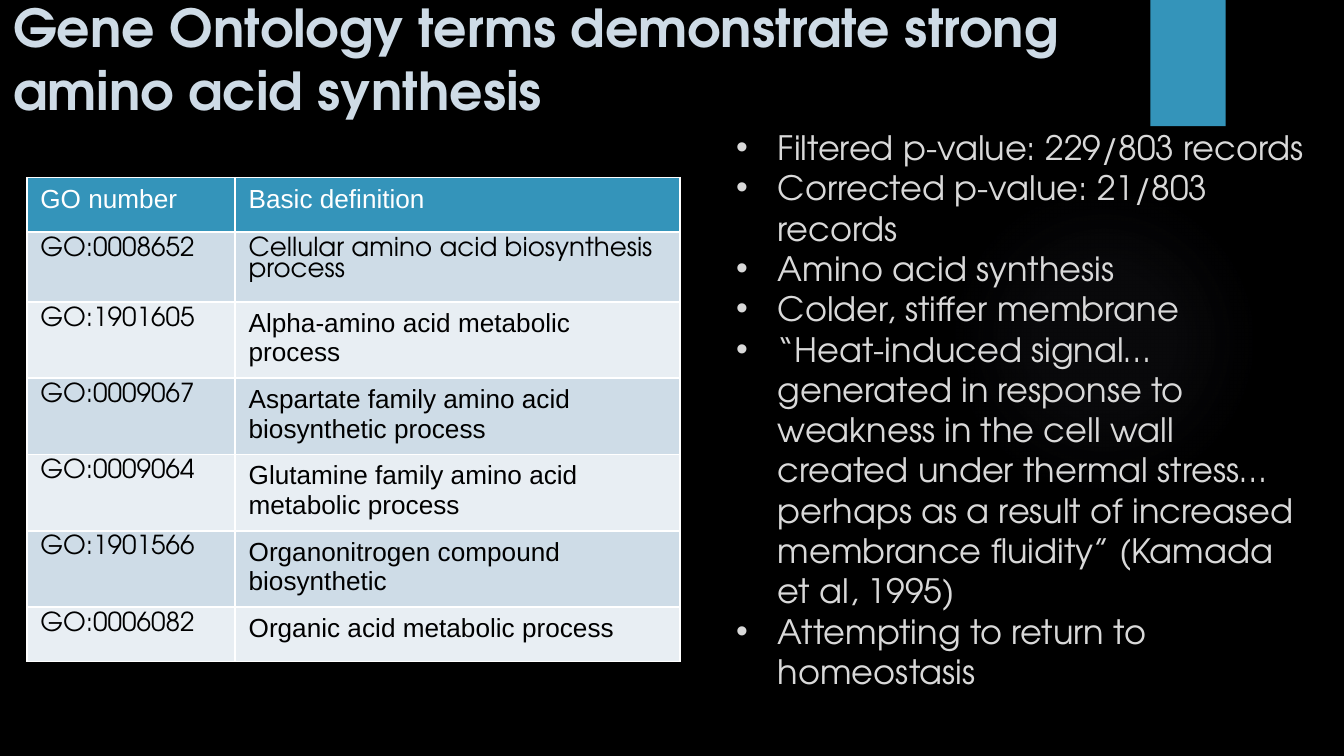
from dataclasses import dataclass

from lxml.etree import SubElement
from pptx import Presentation
from pptx.dml.color import RGBColor
from pptx.enum.shapes import MSO_SHAPE
from pptx.enum.text import MSO_ANCHOR
from pptx.oxml import parse_xml
from pptx.oxml.ns import nsdecls, qn
from pptx.util import Inches, Pt


@dataclass(frozen=True)
class Theme:
    background: str = "000000"
    accent: str = "3494BA"
    glow: str = "7F7B9A"
    title: str = "CEDBE6"
    body: str = "D9D9D9"
    header_text: str = "FFFFFF"
    cell_text: str = "000000"
    border: str = "FFFFFF"
    bands: tuple = ("CEDCE7", "E8EEF3")
    display_font: str = "TeX Gyre Adventor"
    plain_font: str = "Arial"
    title_size: int = 28
    body_size: int = 18
    cell_size: int = 14


THEME = Theme()
WIDTH = Inches(10)
HEIGHT = WIDTH * 9 // 16

TITLE = "Gene Ontology terms demonstrate strong amino acid synthesis"
HEADER = ("GO number", "Basic definition")
TERMS = [
    ("GO:0008652", "Cellular amino acid biosynthesis process"),
    ("GO:1901605", "Alpha-amino acid metabolic process"),
    ("GO:0009067", "Aspartate family amino acid biosynthetic process"),
    ("GO:0009064", "Glutamine family amino acid metabolic process"),
    ("GO:1901566", "Organonitrogen compound biosynthetic"),
    ("GO:0006082", "Organic acid metabolic process"),
]
FINDINGS = [
    "Filtered p-value: 229/803 records",
    "Corrected p-value: 21/803 records",
    "Amino acid synthesis",
    "Colder, stiffer membrane",
    "“Heat-induced signal… generated in response to weakness in the cell wall "
    "created under thermal stress… perhaps as a result of increased "
    "membrance fluidity” (Kamada et al, 1995)",
    "Attempting to return to homeostasis",
]


def share_box(left, top, width, height):
    """Turn percentages of the slide's size into a box of lengths."""
    return (int(WIDTH * left / 100), int(HEIGHT * top / 100),
            int(WIDTH * width / 100), int(HEIGHT * height / 100))


def style_font(font, name, size, color, bold=False):
    font.name, font.size, font.bold = name, Pt(size), bold
    font.color.rgb = RGBColor.from_string(color)


def add_plain_shape(slide, kind, box):
    shape = slide.shapes.add_shape(kind, *box)
    shape.shadow.inherit = False
    shape.line.fill.background()
    return shape


def add_glow(slide, box):
    """Add a faint circle that fades out from its centre."""
    shape = add_plain_shape(slide, MSO_SHAPE.OVAL, box)
    stops = "".join(
        f'<a:gs pos="{position * 1000}"><a:srgbClr val="{THEME.glow}">'
        f'<a:alpha val="{alpha * 1000}"/></a:srgbClr></a:gs>'
        for position, alpha in ((0, 7), (36, 6), (69, 0)))
    gradient = parse_xml(
        f'<a:gradFill {nsdecls("a")}><a:gsLst>{stops}</a:gsLst><a:path path="circle">'
        '<a:fillToRect l="50000" t="50000" r="50000" b="50000"/></a:path></a:gradFill>')
    shape.element.spPr.find(qn("a:prstGeom")).addnext(gradient)


def add_accent_tab(slide, box):
    shape = add_plain_shape(slide, MSO_SHAPE.RECTANGLE, box)
    shape.fill.solid()
    shape.fill.fore_color.rgb = RGBColor.from_string(THEME.accent)


def add_title(slide, box):
    text_frame = slide.shapes.add_textbox(*box).text_frame
    text_frame.word_wrap = True
    text_frame.vertical_anchor = MSO_ANCHOR.MIDDLE
    text_frame.margin_top = text_frame.margin_bottom = Inches(0.1)
    text_frame.text = TITLE
    style_font(text_frame.paragraphs[0].runs[0].font, THEME.display_font,
               THEME.title_size, THEME.title, bold=True)


def set_borders(cell):
    properties = cell._tc.get_or_add_tcPr()
    for index, side in enumerate("LRTB"):
        properties.insert(index, parse_xml(
            f'<a:ln{side} {nsdecls("a")} w="{Pt(1)}"><a:solidFill>'
            f'<a:srgbClr val="{THEME.border}"/></a:solidFill></a:ln{side}>'))


def fill_cell(cell, text, font_name, color, fill):
    cell.text_frame.text = text
    cell.fill.solid()
    cell.fill.fore_color.rgb = RGBColor.from_string(fill)
    set_borders(cell)
    paragraph = cell.text_frame.paragraphs[0]
    if font_name == THEME.display_font:
        paragraph.line_spacing = 0.9
    style_font(paragraph.runs[0].font, font_name, THEME.cell_size, color)


def add_term_table(slide, box):
    """Add the table with low rows that grow to fit their text."""
    width, height = box[2:]
    frame = slide.shapes.add_table(len(TERMS) + 1, len(HEADER), *box)
    table = frame.table
    for column, share in zip(table.columns, (0.319, 0.681)):
        column.width = int(width * share)
    for row in table.rows:
        row.height = height // 9
    frame.height = height

    for column, text in enumerate(HEADER):
        fill_cell(table.cell(0, column), text, THEME.plain_font,
                  THEME.header_text, THEME.accent)
    for index, term in enumerate(TERMS):
        definition_font = THEME.plain_font if index else THEME.display_font
        fonts = (THEME.display_font, definition_font)
        for column, (text, font_name) in enumerate(zip(term, fonts)):
            fill_cell(table.cell(index + 1, column), text, font_name,
                      THEME.cell_text, THEME.bands[index % 2])


def add_findings(slide, box):
    text_frame = slide.shapes.add_textbox(*box).text_frame
    text_frame.word_wrap = True
    text_frame.text = "\n".join(FINDINGS)
    for paragraph in text_frame.paragraphs:
        properties = paragraph._p.get_or_add_pPr()
        properties.set("marL", str(Inches(0.31)))
        properties.set("indent", str(-Inches(0.31)))
        SubElement(properties, qn("a:buFont"), typeface=THEME.plain_font)
        SubElement(properties, qn("a:buChar"), char="•")
        style_font(paragraph.runs[0].font, THEME.display_font,
                   THEME.body_size, THEME.body)


def main():
    presentation = Presentation()
    presentation.slide_width, presentation.slide_height = WIDTH, HEIGHT
    slide = presentation.slides.add_slide(presentation.slide_layouts[6])
    slide.background.fill.solid()
    slide.background.fill.fore_color.rgb = RGBColor.from_string(THEME.background)

    add_glow(slide, share_box(70.6, 24.5, 23.1, 41.1))
    add_accent_tab(slide, share_box(85.6, 0, 5.6, 16.7))
    add_title(slide, share_box(0, -0.7, 90, 16.7))
    add_term_table(slide, share_box(2, 23.5, 48.6, 64.7))
    add_findings(slide, share_box(53.8, 15.9, 44.7, 82.5))
    presentation.save("out.pptx")


if __name__ == "__main__":
    main()
